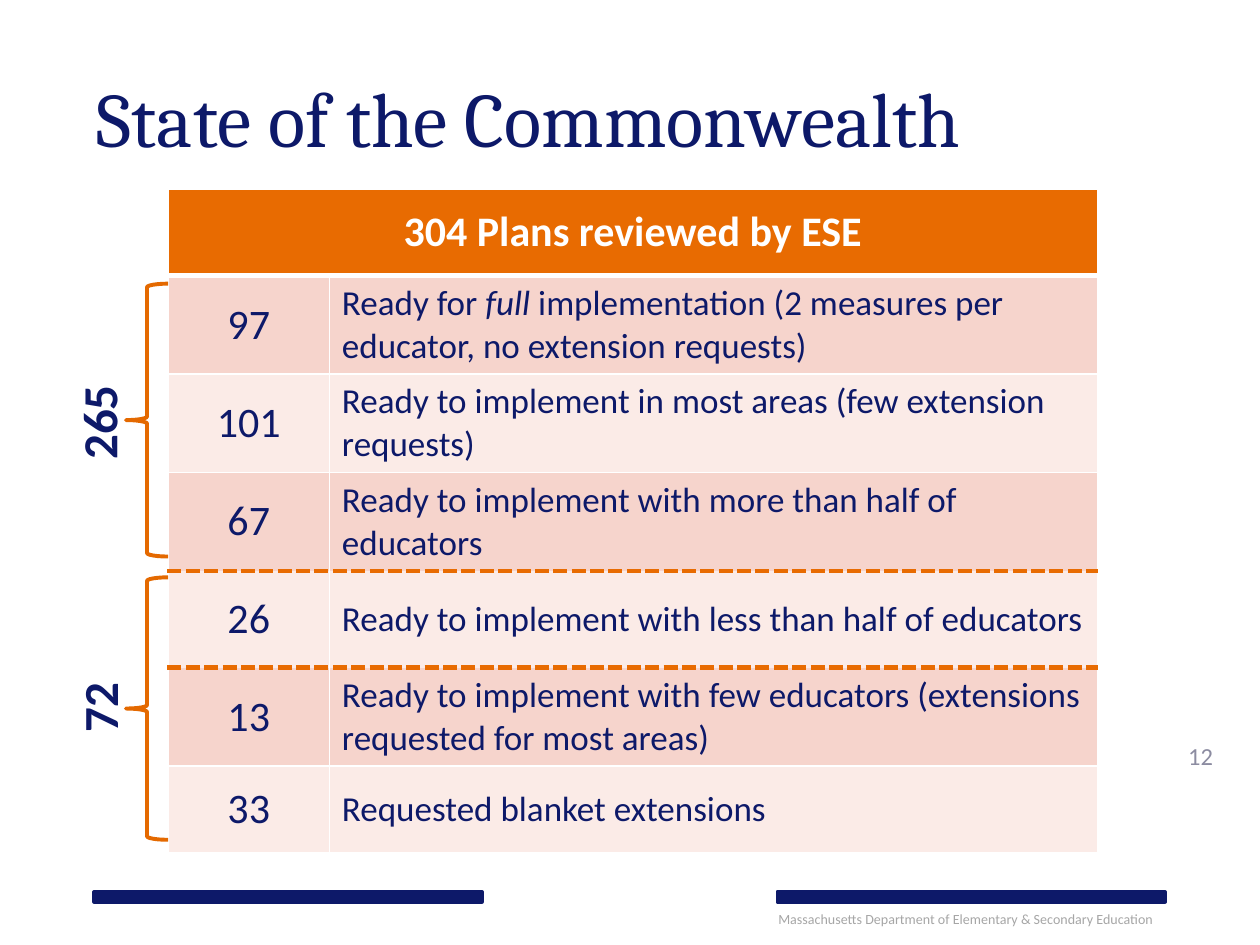
"""Build the slide on the readiness of 304 reviewed plans."""
from dataclasses import dataclass

from lxml import etree
from pptx import Presentation
from pptx.dml.color import RGBColor
from pptx.enum.shapes import MSO_SHAPE
from pptx.enum.text import MSO_ANCHOR, PP_ALIGN
from pptx.oxml.ns import qn
from pptx.util import Cm, Pt

LEFT, CENTER = PP_ALIGN.LEFT, PP_ALIGN.CENTER
TOP, MIDDLE = MSO_ANCHOR.TOP, MSO_ANCHOR.MIDDLE
RECTANGLE, LEFT_BRACE = MSO_SHAPE.RECTANGLE, MSO_SHAPE.LEFT_BRACE


@dataclass(frozen=True)
class Theme:
    heading_font: str = "Cambria"
    body_font: str = "Calibri"
    navy: str = "0D1969"
    orange: str = "E86B01"
    brace: str = "E46900"
    dark_band: str = "F6D4CC"
    light_band: str = "FBEBE7"
    white: str = "FFFFFF"
    footer_gray: str = "A6A6A6"
    number_gray: str = "8C8CA1"
    title_size: int = 44
    total_size: int = 28
    count_size: int = 24
    status_size: int = 20
    number_size: int = 14
    footer_size: int = 8


theme = Theme()


def write_text(holder, text, size, color, align=LEFT, bold=False, font=theme.body_font):
    paragraph = holder.text_frame.paragraphs[0]
    paragraph.alignment = align
    paragraph.font.name = font
    paragraph.font.size = Pt(size)
    paragraph.font.bold = bold
    paragraph.font.color.rgb = RGBColor.from_string(color)
    for index, part in enumerate(text.split("*")):
        run = paragraph.add_run()
        run.text = part
        if index % 2:
            run.font.italic = True


def add_border(cell, side, color, width, dash="solid"):
    line = etree.SubElement(cell._tc.get_or_add_tcPr(), qn(f"a:ln{side}"), w=str(Pt(width)))
    fill = etree.SubElement(line, qn("a:solidFill"))
    etree.SubElement(fill, qn("a:srgbClr"), val=color)
    etree.SubElement(line, qn("a:prstDash"), val=dash)


prs = Presentation()
prs.slide_width, prs.slide_height = Cm(25.4), Cm(19.05)
slide = prs.slides.add_slide(prs.slide_layouts[5])
shapes = slide.shapes

title = shapes.title
title.left, title.top, title.width, title.height = Cm(1.7), Cm(0.76), Cm(22.02), Cm(3.18)
title.text_frame.vertical_anchor = MIDDLE
write_text(title, "State of the Commonwealth", theme.title_size, theme.navy,
           font=theme.heading_font)

for left in (1.9, 15.67):
    bar = shapes.add_shape(RECTANGLE, Cm(left), Cm(17.98), Cm(7.82), Cm(0.2))
    bar.shadow.inherit = False
    bar.fill.solid()
    bar.fill.fore_color.rgb = RGBColor.from_string(theme.navy)
    bar.line.color.rgb = RGBColor.from_string(theme.navy)
    bar.line.width = Pt(2)

readiness = [
    ("97", "Ready for *full* implementation (2 measures per educator, no extension requests)"),
    ("101", "Ready to implement in most areas (few extension requests)"),
    ("67", "Ready to implement with more than half of educators"),
    ("26", "Ready to implement with less than half of educators"),
    ("13", "Ready to implement with few educators (extensions requested for most areas)"),
    ("33", "Requested blanket extensions"),
]
row_heights = [1.75] + [1.95] * 5 + [1.75]
column_widths = [3.25, 15.48]
plans = shapes.add_table(len(row_heights), len(column_widths), Cm(3.39), Cm(3.81),
                         Cm(sum(column_widths)), Cm(sum(row_heights))).table
plans.horz_banding = False
for row, height in zip(plans.rows, row_heights):
    row.height = Cm(height)
for column, width in zip(plans.columns, column_widths):
    column.width = Cm(width)

edges = [(theme.white, 1)] * (len(row_heights) + 1)
edges[1] = (theme.white, 3)
edges[4] = edges[5] = (theme.orange, 3, "lgDash")
bands = [theme.orange] + [theme.dark_band, theme.light_band] * 3
for row_index, row in enumerate(plans.rows):
    for cell in row.cells:
        for side in "LR":
            add_border(cell, side, theme.white, 1)
        add_border(cell, "T", *edges[row_index])
        add_border(cell, "B", *edges[row_index + 1])
        cell.fill.solid()
        cell.fill.fore_color.rgb = RGBColor.from_string(bands[row_index])
        cell.vertical_anchor = MIDDLE

heading = plans.cell(0, 0)
heading.merge(plans.cell(0, 1))
write_text(heading, "304 Plans reviewed by ESE", theme.count_size, theme.white, CENTER, True)
for row_index, (count, status) in enumerate(readiness, start=1):
    write_text(plans.cell(row_index, 0), count, theme.count_size, theme.navy, CENTER)
    write_text(plans.cell(row_index, 1), status, theme.status_size, theme.navy)

for top, height in ((5.72, 5.5), (11.64, 5.29)):
    brace = shapes.add_shape(LEFT_BRACE, Cm(2.54), Cm(top), Cm(0.85), Cm(height))
    brace.shadow.inherit = False
    brace.fill.background()
    brace.line.color.rgb = RGBColor.from_string(theme.brace)
    brace.line.width = Pt(2.25)

labels = [
    ("265", 0.61, 7.42, 2.74, 1.45, 270, theme.total_size, theme.navy, LEFT, True, TOP),
    ("72", 0.94, 13.23, 2.11, 1.45, 270, theme.total_size, theme.navy, LEFT, True, TOP),
    ("12", 23.47, 14.6, 1.47, 1.27, 0, theme.number_size, theme.number_gray, CENTER, False, MIDDLE),
    ("Massachusetts Department of Elementary & Secondary Education",
     15.44, 18.24, 8.26, 0.61, 0, theme.footer_size, theme.footer_gray, LEFT, False, TOP),
]
for text, left, top, width, height, rotation, size, color, align, bold, anchor in labels:
    label = shapes.add_textbox(Cm(left), Cm(top), Cm(width), Cm(height))
    label.rotation = rotation
    label.text_frame.word_wrap = True
    label.text_frame.vertical_anchor = anchor
    write_text(label, text, size, color, align, bold)

prs.save("out.pptx")
